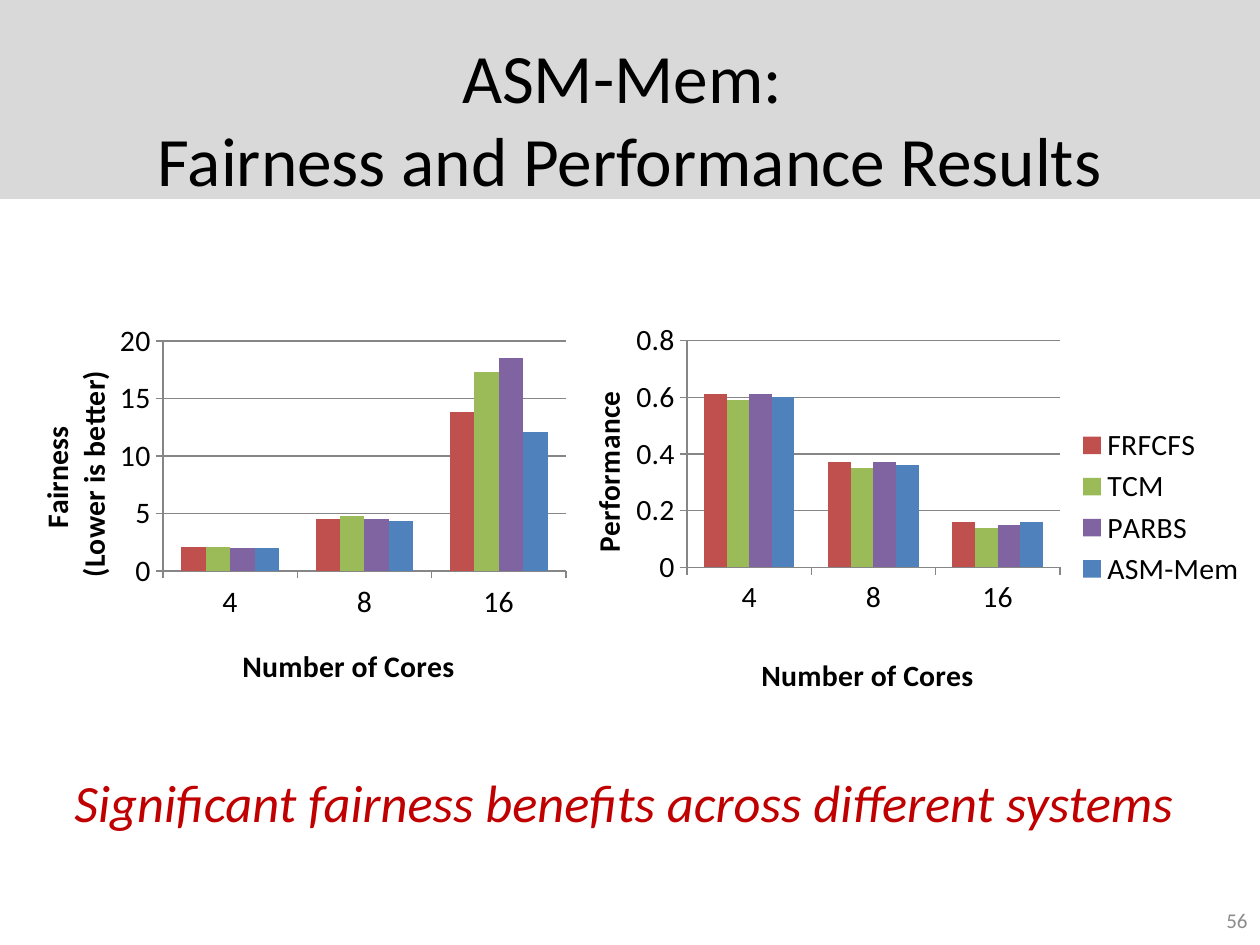
from lxml.etree import SubElement, QName
from pptx import Presentation
from pptx.chart.data import CategoryChartData as Data
from pptx.dml.color import RGBColor as Rgb
from pptx.enum.chart import XL_CHART_TYPE as Kind, XL_LEGEND_POSITION as Side, XL_TICK_MARK as Tick
from pptx.enum.shapes import MSO_SHAPE as Form
from pptx.enum.text import MSO_ANCHOR as Anchor, PP_ALIGN as Align
from pptx.util import Pt

SCALE = 914400 / 126
FACE = "Calibri"
COLORS = {
    "band": "D9D9D9", "text": "000000", "page": "8C8C8C", "claim": "C00000", "axis": "868686",
    "FRFCFS": "C0504D", "TCM": "9BBB59", "PARBS": "8064A2", "ASM-Mem": "4F81BD",
}
CORES = ["4", "8", "16"]
FAIR = {
    "Series 1": (2.1, 4.5, 13.8), "Series 2": (2.1, 4.8, 17.3),
    "Series 3": (2, 4.5, 18.5), "Series 4": (2, 4.3, 12.1),
}
PERF = {
    "FRFCFS": (0.61, 0.37, 0.16), "TCM": (0.59, 0.35, 0.14),
    "PARBS": (0.61, 0.37, 0.15), "ASM-Mem": (0.6, 0.36, 0.16),
}
HUES = ["FRFCFS", "TCM", "PARBS", "ASM-Mem"]


def px(num):
    return round(num * SCALE)


def tint(name):
    return Rgb.from_string(COLORS[name])


def style(font, size, color, bold=False, italic=False):
    font.name, font.size, font.bold, font.italic = FACE, Pt(size), bold, italic
    font.color.rgb = tint(color)


def write(frame, lines, size, color, align, anchor, italic=False):
    frame.word_wrap = True
    frame.vertical_anchor = anchor
    para = frame.paragraphs[0]
    para.alignment = align
    for i, line in enumerate(lines):
        if i:
            para.add_line_break()
        run = para.add_run()
        run.text = line
        style(run.font, size, color, italic=italic)


def add_band(slide):
    band = slide.shapes.add_shape(Form.RECTANGLE, 0, 0, px(1260), px(199))
    band.shadow.inherit = False
    band.fill.solid()
    band.fill.fore_color.rgb = tint("band")
    band.line.fill.background()
    slide.shapes._spTree.insert(2, band._element)


def add_title(slide, box, lines):
    title = slide.shapes.title
    title.left, title.top, title.width, title.height = map(px, box)
    write(title.text_frame, lines, 39.6, "text", Align.CENTER, Anchor.MIDDLE)


def add_text(slide, box, text, size, color, align, anchor, italic=False):
    shape = slide.shapes.add_textbox(*map(px, box))
    write(shape.text_frame, [text], size, color, align, anchor, italic)


def place(node, index, frame, box, inner=False):
    space = QName(node).namespace
    for old in node.findall(f"{{{space}}}layout"):
        node.remove(old)
    layout = SubElement(node, f"{{{space}}}layout")
    node.insert(index, layout)
    manual = SubElement(layout, f"{{{space}}}manualLayout")
    left, top, width, height = frame
    parts = [(box[0] - left) / width, (box[1] - top) / height]
    parts += [size / full for size, full in zip(box[2:], (width, height))]
    items = [("layoutTarget", "inner")] if inner else []
    items += [("xMode", "edge"), ("yMode", "edge")]
    items += [(tag, f"{part:.4f}") for tag, part in zip("xywh", parts)]
    for tag, val in items:
        SubElement(manual, f"{{{space}}}{tag}").set("val", val)


def set_axis(axis, text, frame, spot, top=None, step=None, turn=0):
    axis.major_tick_mark, axis.minor_tick_mark = Tick.OUTSIDE, Tick.NONE
    axis.format.line.color.rgb = tint("axis")
    axis.has_major_gridlines = top is not None
    if top is not None:
        axis.minimum_scale, axis.maximum_scale, axis.major_unit = 0, top, step
        axis.major_gridlines.format.line.color.rgb = tint("axis")
    words = axis.axis_title.text_frame
    words.text = text
    for para in words.paragraphs:
        for run in para.runs:
            style(run.font, 17, "text", bold=True)
    words._txBody.bodyPr.set("rot", str(turn))
    words._txBody.bodyPr.set("vert", "horz")
    place(axis.axis_title._element, 1, frame, spot)


def add_bars(slide, frame, plot, rows, name, top, step, spots, key=None):
    data = Data()
    data.categories = CORES
    for label, vals in rows.items():
        data.add_series(label, vals)
    chart = slide.shapes.add_chart(Kind.COLUMN_CLUSTERED, *map(px, frame), data).chart
    style(chart.font, 17, "text")
    chart.has_title = False
    chart.has_legend = key is not None
    bars = chart.plots[0]
    bars.gap_width, bars.overlap, bars.vary_by_categories = 150, 0, False
    for row, hue in zip(bars.series, HUES):
        row.format.fill.solid()
        row.format.fill.fore_color.rgb = tint(hue)
    set_axis(chart.category_axis, "Number of Cores", frame, spots[0])
    set_axis(chart.value_axis, name, frame, spots[1], top, step, -5400000)
    place(chart._chartSpace.chart.plotArea, 0, frame, plot, True)
    if key:
        chart.legend.position = Side.RIGHT
        chart.legend.include_in_layout = False
        style(chart.legend.font, 17, "text")
        place(chart.legend._element, 1, frame, key)


def main():
    deck = Presentation()
    deck.slide_width, deck.slide_height = px(1260), px(945)
    slide = deck.slides.add_slide(deck.slide_layouts[5])
    add_band(slide)
    add_title(slide, (63, 38, 1134, 158), ["ASM-Mem: ", "Fairness and Performance Results"])
    add_text(slide, (966, 895, 294, 50), "56", 12, "page", Align.RIGHT, Anchor.MIDDLE)
    add_bars(slide, (0, 315, 577, 388), (163, 341, 403, 230), FAIR,
             "Fairness \n(Lower is better)", 20, 5, [(237, 640), (33, 367)])
    add_bars(slide, (546, 315, 714, 388), (687, 341, 373, 230), PERF,
             "Performance", 0.8, 0.2, [(756, 654), (582, 389)], (1078, 424, 166, 172))
    add_text(slide, (42, 764, 1176, 77), "Significant fairness benefits across different systems ",
             30, "claim", Align.CENTER, Anchor.TOP, True)
    deck.save("out.pptx")


if __name__ == "__main__":
    main()
